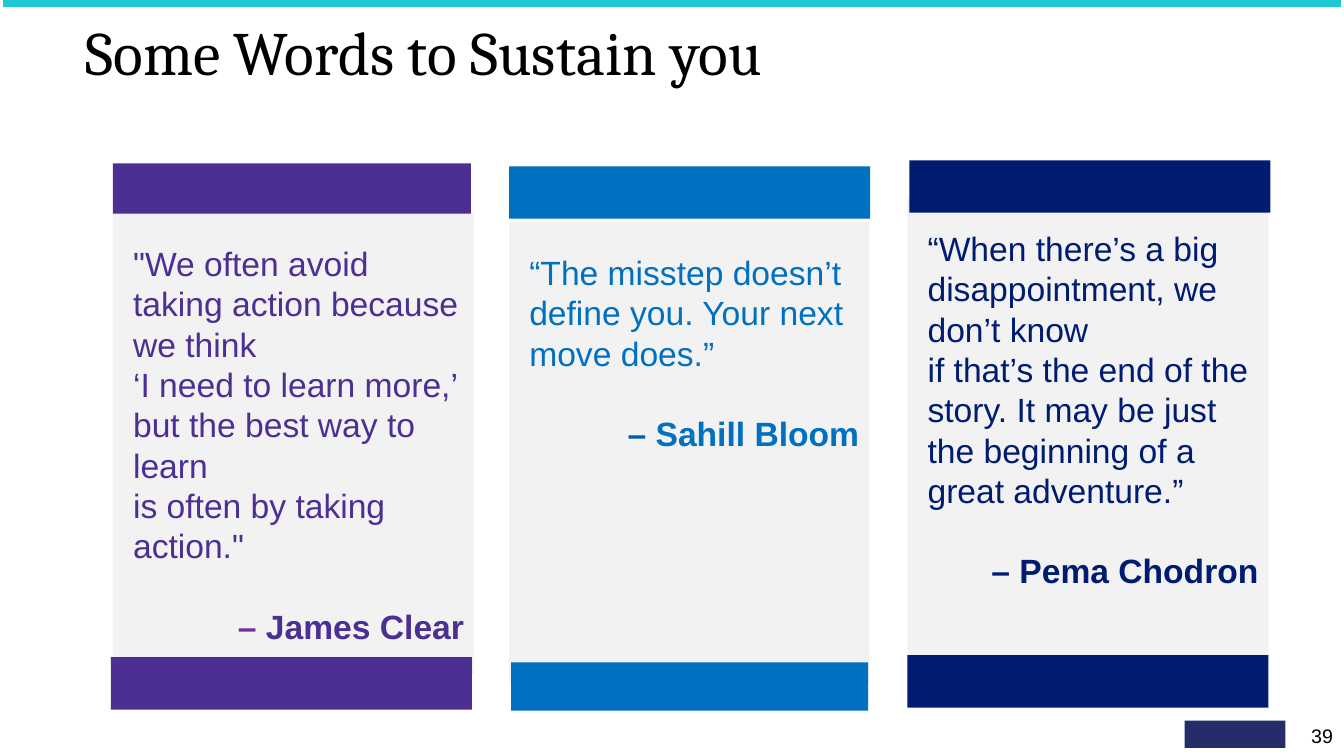
from lxml import etree
from pptx import Presentation
from pptx.dml.color import RGBColor
from pptx.enum.shapes import MSO_CONNECTOR as Connector, MSO_SHAPE as Shape
from pptx.enum.text import MSO_ANCHOR as Anchor, PP_ALIGN as Align
from pptx.oxml.ns import qn
from pptx.util import Inches, Pt

COLORS = {
    "teal": "1DCAD3", "navy": "001C71", "blue": "0070C0", "purple": "4D2F93",
    "violet": "7030A0", "azure": "005CB9", "panel": "F2F2F2",
    "black": "000000", "mark": "252C6A",
}
TITLE = "Some Words to Sustain you"
PAGE_NUMBER = "39"

# Each box is left, top, width, height in inches
CARDS = [
    {"quote": "\"We often avoid taking action because we think \n"
              "‘I need to learn more,’ but the best way to learn \n"
              "is often by taking action.\"",
     "author": "James Clear", "color": "purple", "dash": "violet",
     "panel": (1.12, 2.11, 3.58, 4.58),
     "bars": [(1.12, 1.62, 3.55, 0.5), (1.1, 6.52, 3.58, 0.52)]},
    {"quote": "“The misstep doesn’t define you. Your next move does.”",
     "author": "Sahill Bloom", "color": "blue", "dash": "azure",
     "panel": (5.05, 2.2, 3.57, 4.58),
     "bars": [(5.05, 1.65, 3.58, 0.52), (5.07, 6.57, 3.54, 0.48)]},
    {"quote": "“When there’s a big disappointment, we don’t know \n"
              "if that’s the end of the story. It may be just "
              "the beginning of a great adventure.”",
     "author": "Pema Chodron", "color": "navy", "dash": "navy",
     "panel": (9, 1.96, 3.58, 4.58),
     "bars": [(9.02, 1.59, 3.58, 0.52), (9, 6.5, 3.58, 0.52)]},
]
PANEL_FRAME = {"word_wrap": True, "vertical_anchor": Anchor.TOP,
               "margin_left": Inches(0.2), "margin_top": Inches(0.3),
               "margin_right": Inches(0.1), "margin_bottom": Inches(0.05)}


def rgb(name):
    return RGBColor.from_string(COLORS[name])


def apply(target, formats):
    for name, value in formats.items():
        setattr(target, name, value)


def style(span, color, size=24, font="Arial", bold=False):
    apply(span.font, {"name": font, "size": Pt(size), "bold": bold})
    span.font.color.rgb = rgb(color)


def add_block(page, box, color):
    block = page.shapes.add_shape(Shape.RECTANGLE, *map(Inches, box))
    block.shadow.inherit = False
    block.fill.solid()
    block.fill.fore_color.rgb = rgb(color)
    block.line.fill.background()
    return block


def add_label(page, box, text, frame_formats, para_formats, **font):
    frame = page.shapes.add_textbox(*map(Inches, box)).text_frame
    apply(frame, {"word_wrap": True, **frame_formats})
    para = frame.paragraphs[0]
    apply(para, {"line_spacing": 0.9, **para_formats})
    para.text = text
    style(para.runs[0], "black", **font)


def add_card(page, card):
    frame = add_block(page, card["panel"], "panel").text_frame
    apply(frame, PANEL_FRAME)
    quote = frame.paragraphs[0]
    quote.alignment = Align.LEFT
    quote.text = card["quote"]
    for span in quote.runs:
        style(span, card["color"])
    # Author, one line below the quote
    author = frame.add_paragraph()
    apply(author, {"alignment": Align.RIGHT, "space_before": Pt(28.8)})
    for text, color in (("– ", card["dash"]), (card["author"], card["color"])):
        span = author.add_run()
        span.text = text
        style(span, color, bold=True)
    for bar in card["bars"]:
        add_block(page, bar, card["color"])


def main():
    deck = Presentation()
    apply(deck, {"slide_width": Inches(13.33), "slide_height": Inches(7.5)})
    page = deck.slides.add_slide(deck.slide_layouts[6])

    # Top rule
    ends = map(Inches, (0.03, 0.03, 13.3, 0.03))
    rule = page.shapes.add_connector(Connector.STRAIGHT, *ends)
    rule.line.color.rgb = rgb("teal")
    rule.line.width = Pt(6)
    etree.SubElement(rule._element.spPr, qn("a:effectLst"))

    # Footer mark and page number
    add_block(page, (11.75, 7.15, 1, 0.27), "mark")
    add_label(page, (12.72, 7.19, 0.6, 0.25), PAGE_NUMBER,
              {"vertical_anchor": Anchor.MIDDLE}, {"alignment": Align.RIGHT}, size=14)

    # Title and quote cards
    add_label(page, (0.75, 0.17, 12.92, 1.45), TITLE, {}, {}, size=44, font="Cambria")
    for card in CARDS:
        add_card(page, card)

    deck.save("out.pptx")


if __name__ == "__main__":
    main()
